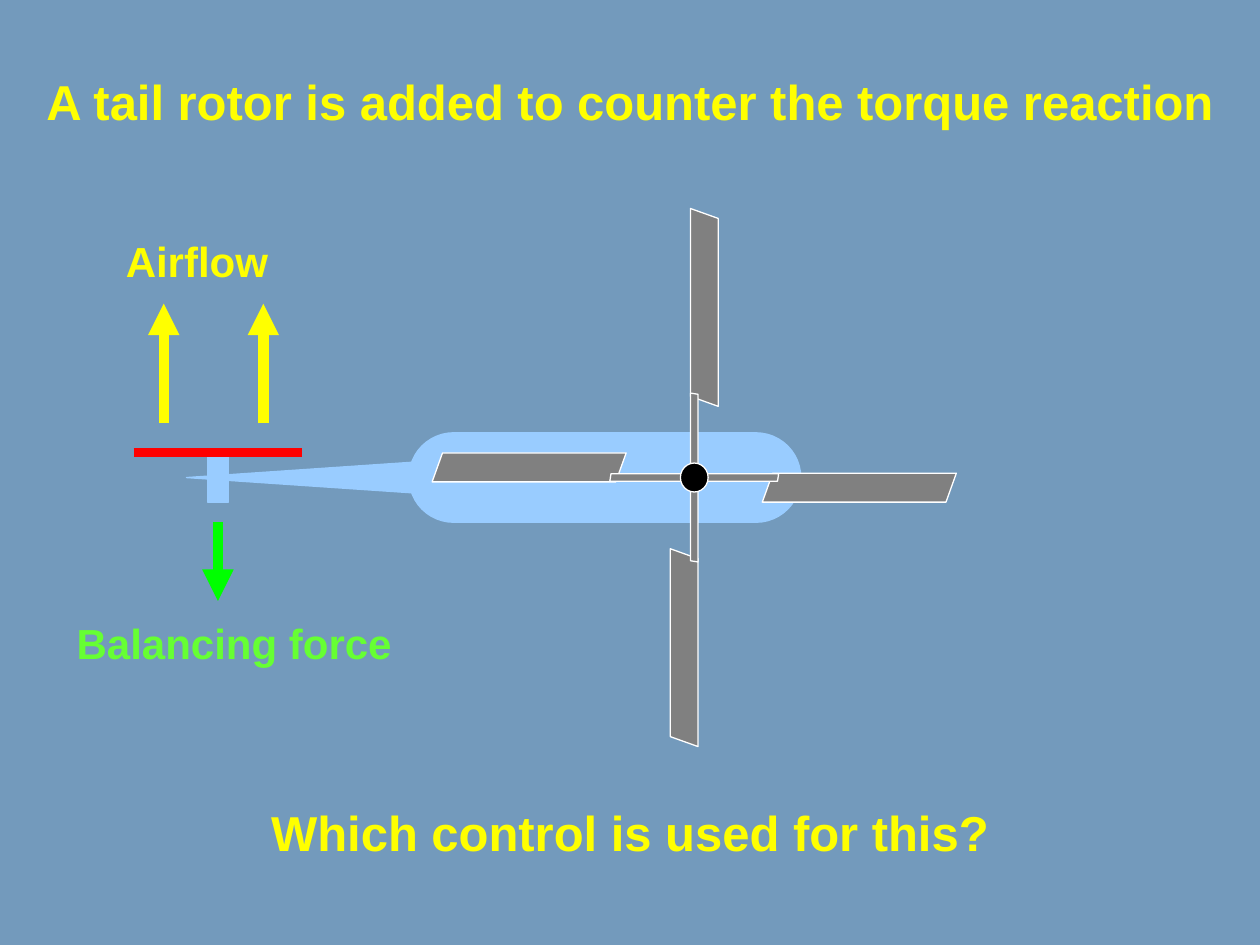
from dataclasses import dataclass
from math import cos, radians, sin

from lxml import etree
from pptx import Presentation
from pptx.dml.color import RGBColor
from pptx.enum.shapes import MSO_CONNECTOR, MSO_SHAPE
from pptx.enum.text import MSO_AUTO_SIZE, PP_ALIGN
from pptx.oxml.ns import qn
from pptx.util import Inches, Pt

STRAIGHT = MSO_CONNECTOR.STRAIGHT
ELLIPSE = MSO_SHAPE.OVAL
PARALLELOGRAM = MSO_SHAPE.PARALLELOGRAM
RECTANGLE = MSO_SHAPE.RECTANGLE
ROUNDED = MSO_SHAPE.ROUNDED_RECTANGLE
TRIANGLE = MSO_SHAPE.ISOSCELES_TRIANGLE
CENTER, LEFT = PP_ALIGN.CENTER, PP_ALIGN.LEFT

COLORS = {
    "background": "739ABC",
    "body": "99CCFF",
    "blade": "808080",
    "outline": "FFFFFF",
    "hub": "000000",
    "tail rotor": "FF0000",
    "airflow": "FFFF00",
    "force": "00FF00",
    "force label": "66FF33",
}

HUB_X, HUB_Y = 5.51, 3.79
SPAR_RADIUS = 0.35


@dataclass
class Part:
    """A preset shape placed by its centre, in inches, before rotation."""
    preset: int
    x: float
    y: float
    width: float
    height: float
    fill: str
    outline: str
    rotation: float = 0
    adjustment: float | None = None


@dataclass
class Blade:
    angle: int
    length: float
    chord: float
    radius: float


@dataclass
class Line:
    x1: float
    y1: float
    x2: float
    y2: float
    color: str
    width: float
    arrow: bool = True


@dataclass
class Label:
    text: str
    left: float
    top: float
    width: float
    height: float
    size: int
    color: str
    alignment: int = LEFT
    line_spacing: float = 1.0


FUSELAGE = [
    Part(ROUNDED, 4.8, HUB_Y, 0.71, 3.11, "body", "body", 90, 0.5),
    Part(TRIANGLE, 2.66, HUB_Y, 0.32, 2.36, "body", "body", 270),
    Part(RECTANGLE, 1.73, HUB_Y, 0.39, 0.17, "body", "body", 90),
]
BLADES = [
    Blade(0, 1.54, 0.23, 1.31),
    Blade(90, 1.57, 0.22, 1.35),
    Blade(270, 1.57, 0.22, 1.35),
    Blade(180, 1.54, 0.23, 1.31),
]
HUB = Part(ELLIPSE, HUB_X, HUB_Y, 0.22, 0.23, "hub", "outline")
LINES = [
    Line(1.06, 3.59, 2.4, 3.59, "tail rotor", 5.25, arrow=False),
    Line(1.3, 3.36, 1.3, 2.41, "airflow", 6),
    Line(2.09, 3.36, 2.09, 2.41, "airflow", 6),
    Line(1.73, 4.14, 1.73, 4.77, "force", 6),
]
LABELS = [
    Label("Which control is used for this?", 0, 6.43, 10, 0.46, 28, "airflow", CENTER, 0.75),
    Label("Balancing force", 0.51, 4.85, 2.95, 0.5, 24, "force label"),
    Label("Airflow", 0.9, 1.82, 1.57, 0.5, 24, "airflow"),
    Label("A tail rotor is added to counter the torque reaction",
          0, 0.52, 10, 0.88, 28, "airflow", CENTER),
]


def rgb(name: str) -> RGBColor:
    return RGBColor.from_string(COLORS[name])


def draw_part(slide, part: Part) -> None:
    shape = slide.shapes.add_shape(
        part.preset,
        Inches(part.x - part.width / 2), Inches(part.y - part.height / 2),
        Inches(part.width), Inches(part.height))
    shape.shadow.inherit = False
    shape.rotation = part.rotation
    if part.adjustment is not None:
        shape.adjustments[0] = part.adjustment
    shape.fill.solid()
    shape.fill.fore_color.rgb = rgb(part.fill)
    shape.line.color.rgb = rgb(part.outline)
    shape.line.width = Pt(0)


def draw_blade(slide, blade: Blade) -> None:
    """Draw a blade and its spar, turned clockwise from the left of the hub."""
    cosine, sine = cos(radians(blade.angle)), sin(radians(blade.angle))
    for radius, offset, length, chord, slant in (
        (blade.radius, 0.08, blade.length, blade.chord, 0.358),
        (SPAR_RADIUS, 0, 0.64, 0.06, 0.16),
    ):
        x = HUB_X - radius * cosine + offset * sine
        y = HUB_Y - radius * sine - offset * cosine
        draw_part(slide, Part(PARALLELOGRAM, x, y, length, chord,
                              "blade", "outline", blade.angle, slant))


def draw_line(slide, line: Line) -> None:
    connector = slide.shapes.add_connector(
        STRAIGHT, Inches(line.x1), Inches(line.y1), Inches(line.x2), Inches(line.y2))
    connector.line.color.rgb = rgb(line.color)
    connector.line.width = Pt(line.width)
    if line.arrow:
        etree.SubElement(connector.line._get_or_add_ln(), qn("a:tailEnd"), type="triangle")
    etree.SubElement(connector._element.spPr, qn("a:effectLst"))


def draw_label(slide, label: Label) -> None:
    box = slide.shapes.add_textbox(
        Inches(label.left), Inches(label.top), Inches(label.width), Inches(label.height))
    frame = box.text_frame
    frame.word_wrap = True
    frame.auto_size = MSO_AUTO_SIZE.SHAPE_TO_FIT_TEXT
    paragraph = frame.paragraphs[0]
    paragraph.text = label.text
    paragraph.alignment = label.alignment
    paragraph.line_spacing = label.line_spacing
    paragraph.font.name = "Arial"
    paragraph.font.size = Pt(label.size)
    paragraph.font.bold = True
    paragraph.font.color.rgb = rgb(label.color)


def main() -> None:
    presentation = Presentation()
    presentation.slide_width, presentation.slide_height = Inches(10), Inches(7.5)
    slide = presentation.slides.add_slide(presentation.slide_layouts[6])
    slide.background.fill.solid()
    slide.background.fill.fore_color.rgb = rgb("background")

    for part in FUSELAGE:
        draw_part(slide, part)
    for blade in BLADES:
        draw_blade(slide, blade)
    draw_part(slide, HUB)
    for line in LINES:
        draw_line(slide, line)
    for label in LABELS:
        draw_label(slide, label)
    presentation.save("out.pptx")


if __name__ == "__main__":
    main()
